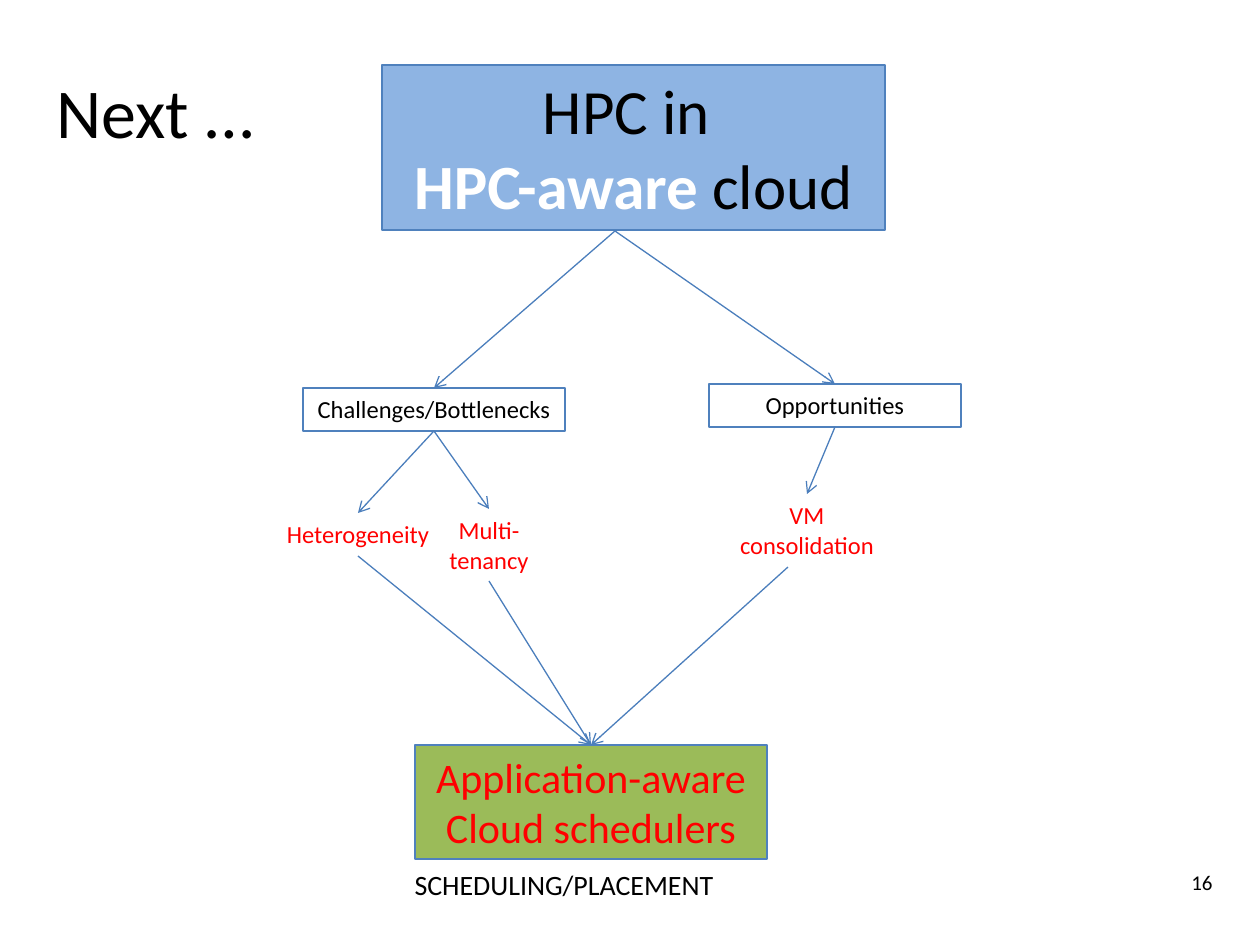
from dataclasses import dataclass
from typing import Optional, Union

from lxml import etree
from pptx import Presentation
from pptx.dml.color import RGBColor
from pptx.enum.shapes import MSO_CONNECTOR, MSO_SHAPE
from pptx.enum.text import MSO_ANCHOR, MSO_AUTO_SIZE, PP_ALIGN
from pptx.oxml.ns import qn
from pptx.util import Emu, Pt

RECTANGLE = MSO_SHAPE.RECTANGLE
STRAIGHT = MSO_CONNECTOR.STRAIGHT
LEFT, CENTER, RIGHT = PP_ALIGN.LEFT, PP_ALIGN.CENTER, PP_ALIGN.RIGHT
TOP, MIDDLE = MSO_ANCHOR.TOP, MSO_ANCHOR.MIDDLE
NO_AUTOSIZE = MSO_AUTO_SIZE.NONE
TITLE_ONLY = 5
TOP_SIDE, BOTTOM_SIDE = 0, 2
PX_PER_INCH = 126


@dataclass(frozen=True)
class Theme:
    font: str = "Calibri"
    black: str = "000000"
    white: str = "FFFFFF"
    red: str = "FF0000"
    blue: str = "8EB4E3"
    green: str = "9BBB59"
    outline: str = "4F81BD"
    arrow: str = "4B7EBC"
    line_width: float = 0.75
    title: int = 40
    root: int = 36
    result: int = 24
    caption: int = 16
    label: int = 14
    number: int = 12


THEME = Theme()


@dataclass(frozen=True)
class Node:
    text: str
    box: tuple[int, int, int, int]
    size: int = THEME.label
    color: str = THEME.black
    outlined: bool = False
    fill: Optional[str] = None
    align: PP_ALIGN = CENTER
    anchor: MSO_ANCHOR = TOP


@dataclass(frozen=True)
class Link:
    start: Union[str, tuple[int, int]]  # a node's bottom, or a free point
    end: str  # a node's top


NODES = {
    "opportunities": Node("Opportunities", (709, 384, 252, 43), outlined=True),
    "challenges": Node("Challenges/Bottlenecks", (303, 388, 262, 43), outlined=True),
    "heterogeneity": Node("Heterogeneity", (258, 513, 200, 43), color=THEME.red),
    "tenancy": Node("Multi-tenancy", (416, 509, 146, 72), color=THEME.red),
    "consolidation": Node("VM consolidation", (726, 494, 162, 72), color=THEME.red),
    "schedulers": Node("Application-aware\nCloud schedulers", (415, 745, 352, 114),
                       THEME.result, THEME.red, True, THEME.green),
    "placement": Node("SCHEDULING/PLACEMENT", (373, 861, 382, 80), THEME.caption),
    "root": Node("HPC in \nHPC-aware cloud", (382, 65, 503, 165),
                 THEME.root, outlined=True, fill=THEME.blue),
    "number": Node("16", (1140, 846, 85, 72), THEME.number, align=RIGHT, anchor=MIDDLE),
}

ROOT_EXIT = (615, 231)
LINKS = [
    Link(ROOT_EXIT, "opportunities"),
    Link(ROOT_EXIT, "challenges"),
    Link("challenges", "heterogeneity"),
    Link("challenges", "tenancy"),
    Link("opportunities", "consolidation"),
    Link("heterogeneity", "schedulers"),
    Link("tenancy", "schedulers"),
    Link((788, 567), "schedulers"),
]


def px(length: int) -> Emu:
    return Emu(round(length * 914400 / PX_PER_INCH))


def rgb(color: str) -> RGBColor:
    return RGBColor.from_string(color)


def write(shape, node: Node) -> None:
    frame = shape.text_frame
    frame.text = node.text
    frame.word_wrap = True
    frame.auto_size = NO_AUTOSIZE
    frame.vertical_anchor = node.anchor
    for paragraph in frame.paragraphs:
        paragraph.alignment = node.align
        for run in paragraph.runs:
            run.font.name = THEME.font
            run.font.size = Pt(node.size)
            run.font.color.rgb = rgb(node.color)


def draw_node(slide, node: Node):
    box = [px(length) for length in node.box]
    if node.outlined:
        shape = slide.shapes.add_shape(RECTANGLE, *box)
        shape.shadow.inherit = False
        shape.line.color.rgb = rgb(THEME.outline)
        shape.line.width = Pt(THEME.line_width)
        if node.fill:
            shape.fill.solid()
            shape.fill.fore_color.rgb = rgb(node.fill)
        else:
            shape.fill.background()
    else:
        shape = slide.shapes.add_textbox(*box)
    write(shape, node)
    return shape


def draw_link(slide, link: Link, shapes: dict) -> None:
    free = not isinstance(link.start, str)
    x, y = link.start if free else (0, 0)
    arrow = slide.shapes.add_connector(STRAIGHT, px(x), px(y), px(x), px(y))
    if not free:
        arrow.begin_connect(shapes[link.start], BOTTOM_SIDE)
    arrow.end_connect(shapes[link.end], TOP_SIDE)
    arrow.line.color.rgb = rgb(THEME.arrow)
    arrow.line.width = Pt(THEME.line_width)
    etree.SubElement(arrow.line._get_or_add_ln(), qn("a:tailEnd"), type="arrow")
    etree.SubElement(arrow._element.spPr, qn("a:effectLst"))


def emphasise_awareness(root) -> None:
    """Split the root's second line into a bold white and a plain part."""
    paragraph = root.text_frame.paragraphs[1]
    aware = paragraph.runs[0]
    cloud = paragraph.add_run()
    aware.text, cloud.text = "HPC-aware ", "cloud"
    cloud.font.name = THEME.font
    cloud.font.size = Pt(THEME.root)
    cloud.font.color.rgb = rgb(THEME.black)
    aware.font.bold = True
    aware.font.color.rgb = rgb(THEME.white)


def main() -> None:
    deck = Presentation()
    deck.slide_width, deck.slide_height = px(1260), px(945)
    slide = deck.slides.add_slide(deck.slide_layouts[TITLE_ONLY])

    # Title
    heading = Node("Next …", (44, 62, 246, 97), THEME.title, align=LEFT)
    title = slide.shapes.title
    title.left, title.top, title.width, title.height = map(px, heading.box)
    write(title, heading)

    # Boxes and labels
    shapes = {name: draw_node(slide, node) for name, node in NODES.items()}
    emphasise_awareness(shapes["root"])

    # Arrows
    for link in LINKS:
        draw_link(slide, link, shapes)

    deck.save("out.pptx")


if __name__ == "__main__":
    main()
